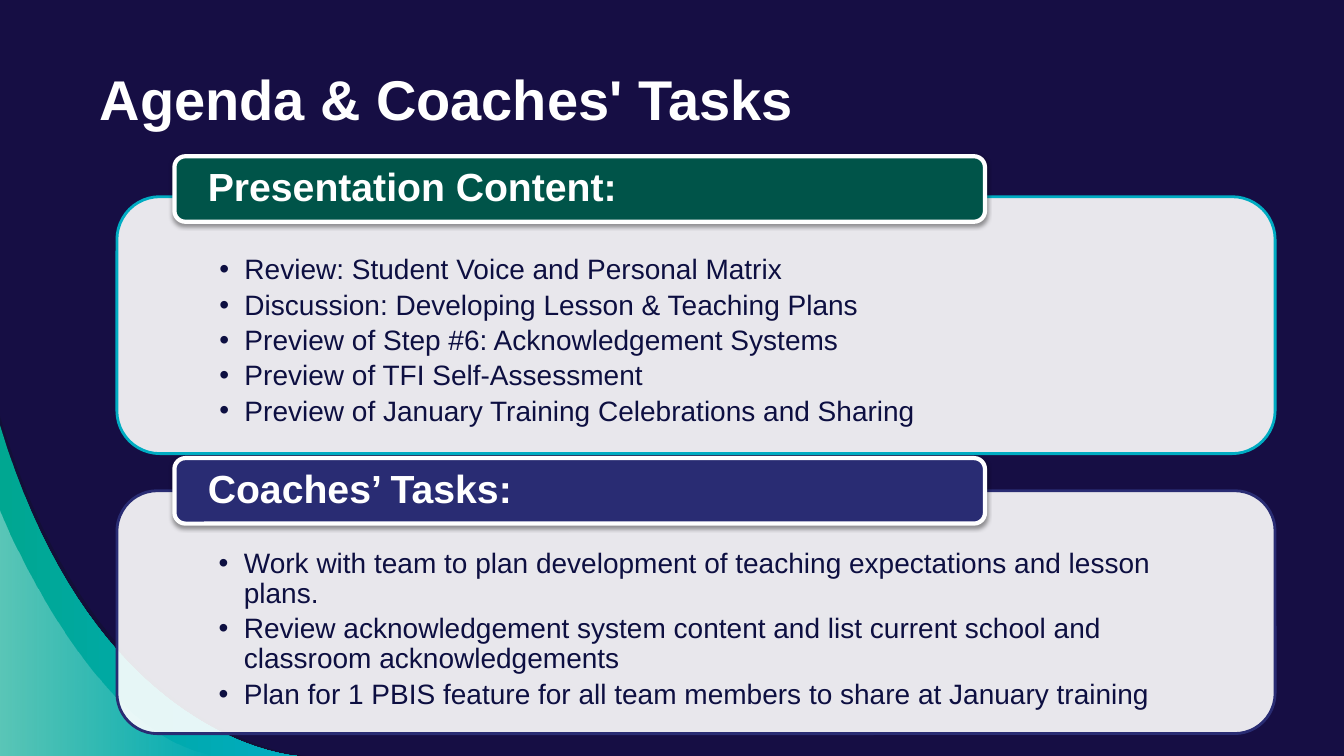
from lxml.etree import SubElement
from pptx import Presentation
from pptx.dml.color import RGBColor
from pptx.enum.shapes import MSO_SHAPE
from pptx.enum.text import MSO_ANCHOR, PP_ALIGN
from pptx.oxml.ns import qn
from pptx.util import Pt

NIGHT = RGBColor(0x16, 0x0E, 0x44)
SHADE = RGBColor(0x12, 0x10, 0x2F)
CYAN = RGBColor(0x00, 0xAC, 0xC2)
TEAL = RGBColor(0x00, 0xA7, 0x91)
GREEN = RGBColor(0x00, 0x54, 0x49)
INDIGO = RGBColor(0x29, 0x2C, 0x73)
INK = RGBColor(0x0D, 0x0F, 0x41)
WHITE = RGBColor(0xFF, 0xFF, 0xFF)
BLACK = RGBColor(0x00, 0x00, 0x00)

AGENDA = [
    ("Presentation Content:", GREEN, CYAN, 111.6, 140.5, 183.5, [
        "Review: Student Voice and Personal Matrix",
        "Discussion: Developing Lesson & Teaching Plans",
        "Preview of Step #6: Acknowledgement Systems",
        "Preview of TFI Self-Assessment",
        "Preview of January Training Celebrations and Sharing",
    ]),
    ("Coaches’ Tasks:", INDIGO, INDIGO, 327.2, 350.5, 173.5, [
        "Work with team to plan development of teaching expectations and lesson plans.",
        "Review acknowledgement system content and list current school and classroom acknowledgements",
        "Plan for 1 PBIS feature for all team members to share at January training",
    ]),
]


class AgendaSlide:
    """Draws the parts of the agenda slide in one shared style."""

    font = "Arial"
    bottom = 540

    def __init__(self, deck):
        self.slide = deck.slides.add_slide(deck.slide_layouts[5])
        backdrop = self.slide.background.fill
        backdrop.solid()
        backdrop.fore_color.rgb = NIGHT

    def set_opacity(self, parent, percent):
        for color in parent.iter(qn("a:srgbClr")):
            SubElement(color, qn("a:alpha"), val=str(percent * 1000))

    def add_text(self, paragraph, text, size, color, bold=False):
        paragraph.alignment = PP_ALIGN.LEFT
        run = paragraph.add_run()
        run.text = text
        run.font.name = self.font
        run.font.size = Pt(size)
        run.font.bold = bold
        run.font.color.rgb = color

    def set_frame(self, shape, anchor, side, top, bottom):
        frame = shape.text_frame
        frame.word_wrap = True
        frame.vertical_anchor = anchor
        frame.margin_left = frame.margin_right = Pt(side)
        frame.margin_top, frame.margin_bottom = Pt(top), Pt(bottom)
        return frame

    def title(self, text):
        heading = self.slide.shapes.title
        heading.left, heading.top = Pt(64), Pt(36.7)
        heading.width, heading.height = Pt(738.7), Pt(66.2)
        frame = self.set_frame(heading, MSO_ANCHOR.MIDDLE, 7.2, 7.2, 7.2)
        self.add_text(frame.paragraphs[0], text, 40, WHITE, bold=True)

    def swoosh(self, start, bend_1, bend_2, end, steps=40):
        points = []
        for step in range(steps + 1):
            t = step / steps
            weights = ((1 - t) ** 3, 3 * t * (1 - t) ** 2, 3 * t ** 2 * (1 - t), t ** 3)
            points.append(tuple(
                Pt(sum(w * p[axis] for w, p in zip(weights, (start, bend_1, bend_2, end))))
                for axis in (0, 1)))
        outline = self.slide.shapes.build_freeform(*points[0])
        outline.add_line_segments(points[1:] + [(0, Pt(self.bottom))], close=True)
        shape = outline.convert_to_shape()
        shape.shadow.inherit = False
        shape.line.fill.background()
        return shape

    def solid_swoosh(self, curve, color, opacity):
        shape = self.swoosh(*curve)
        shape.fill.solid()
        shape.fill.fore_color.rgb = color
        self.set_opacity(shape._element.spPr.find(qn("a:solidFill")), opacity)

    def gradient_swoosh(self, curve, colors, opacities=(100, 100)):
        shape = self.swoosh(*curve)
        shape.fill.gradient()
        shape.fill.gradient_angle = 0
        for stop, color in zip(shape.fill.gradient_stops, colors):
            stop.color.rgb = color
        for stop, opacity in zip(shape._element.spPr.iter(qn("a:gs")), opacities):
            self.set_opacity(stop, opacity)

    def rounded(self, left, top, width, height, fill, line, weight):
        shape = self.slide.shapes.add_shape(
            MSO_SHAPE.ROUNDED_RECTANGLE, Pt(left), Pt(top), Pt(width), Pt(height))
        shape.shadow.inherit = False
        shape.fill.solid()
        shape.fill.fore_color.rgb = fill
        shape.line.color.rgb = line
        shape.line.width = Pt(weight)
        return shape

    def panel(self, top, height, line, items):
        shape = self.rounded(83.5, top, 827.3, height, WHITE, line, 2)
        self.set_opacity(shape._element.spPr.find(qn("a:solidFill")), 90)
        frame = self.set_frame(shape, MSO_ANCHOR.TOP, 64.2, 33.2, 11.4)
        for index, item in enumerate(items):
            paragraph = frame.add_paragraph() if index else frame.paragraphs[0]
            paragraph.level = 1
            paragraph.line_spacing = 0.9
            paragraph.space_after = Pt(3.6)
            self.add_text(paragraph, item, 20, INK)
            properties = paragraph._p.get_or_add_pPr()
            properties.set("marL", str(Pt(18)))
            properties.set("indent", str(-Pt(18)))
            SubElement(properties, qn("a:buFont"), typeface=self.font)
            SubElement(properties, qn("a:buChar"), char="•")

    def banner(self, top, fill, text):
        shape = self.rounded(124.6, top, 579, 46.8, fill, WHITE, 3)
        effects = shape._element.spPr.find(qn("a:effectLst"))
        shadow = SubElement(effects, qn("a:outerShdw"), blurRad=str(Pt(3.1)),
                            dist=str(Pt(1.6)), dir="5400000", rotWithShape="0")
        SubElement(shadow, qn("a:srgbClr"), val=str(BLACK))
        self.set_opacity(shadow, 38)
        frame = self.set_frame(shape, MSO_ANCHOR.MIDDLE, 21.6, 0, 0)
        frame.paragraphs[0].line_spacing = 0.9
        self.add_text(frame.paragraphs[0], text, 28, WHITE, bold=True)


def main():
    deck = Presentation()
    deck.slide_width, deck.slide_height = Pt(960), Pt(540)
    page = AgendaSlide(deck)
    page.solid_swoosh(((0, 297.4), (70.6, 532.1), (218.2, 540), (218.2, 540)), SHADE, 54)
    page.gradient_swoosh(((0, 303.8), (68.4, 532.1), (212.4, 540), (212.4, 540)), (TEAL, CYAN))
    page.gradient_swoosh(((0, 364.3), (0, 364.3), (65.5, 529.2), (155.5, 540)),
                         (WHITE, WHITE), (36, 0))
    for name, fill, line, banner_top, panel_top, panel_height, items in AGENDA:
        page.panel(panel_top, panel_height, line, items)
        page.banner(banner_top, fill, name)
    page.title("Agenda & Coaches' Tasks")
    deck.save("out.pptx")


if __name__ == "__main__":
    main()
